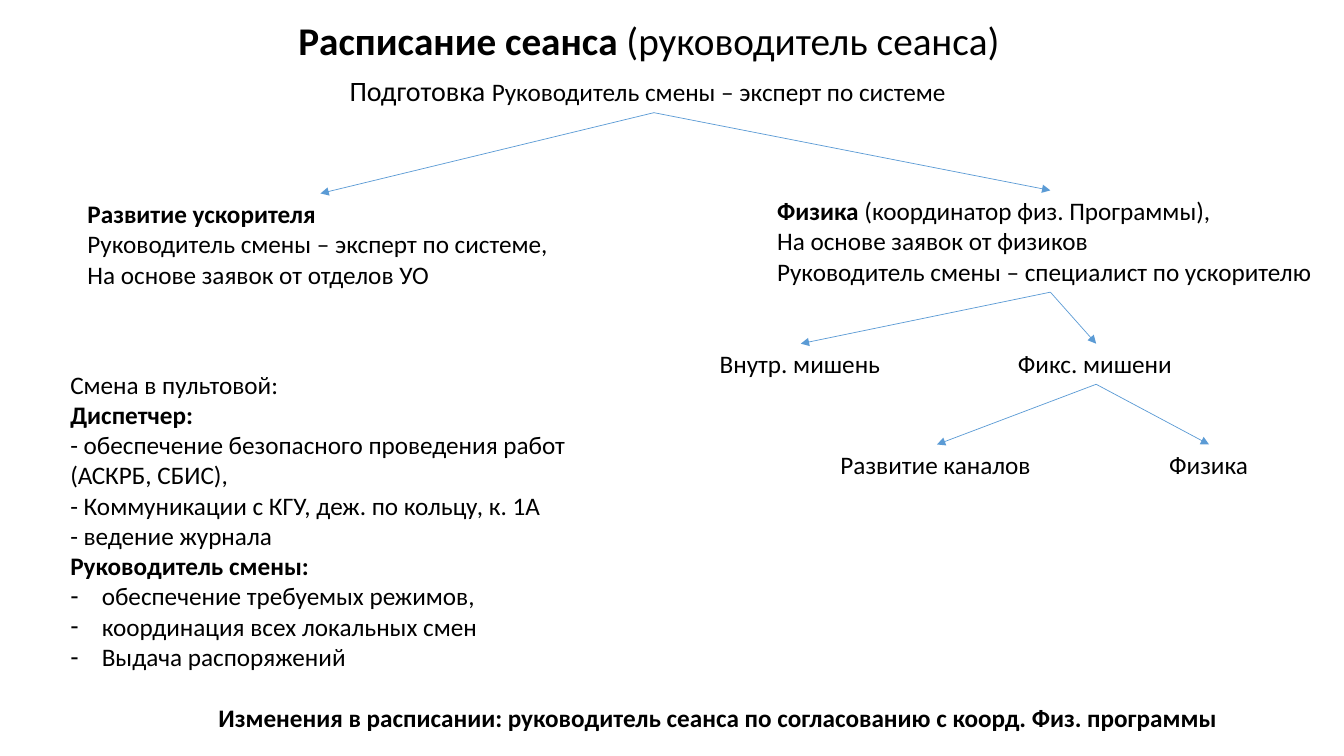
from lxml.etree import SubElement
from pptx import Presentation
from pptx.dml.color import RGBColor
from pptx.enum.shapes import MSO_CONNECTOR
from pptx.enum.text import MSO_ANCHOR, MSO_AUTO_SIZE, PP_ALIGN
from pptx.oxml.ns import qn
from pptx.util import Pt

BLACK = RGBColor(0x00, 0x00, 0x00)
BLUE = RGBColor(0x5B, 0x9B, 0xD5)
FONT = "Calibri"
TOP, BOTTOM = 0, 2  # connection sites of a box

# Each line is a list of runs: (text, bold)
SHIFT = [
    [("Смена в пультовой:", False)],
    [("Диспетчер:", True)],
    [("- обеспечение безопасного проведения работ", False)],
    [("(АСКРБ, СБИС),", False)],
    [("- Коммуникации с КГУ, деж. по кольцу, к. 1А", False)],
    [("- ведение журнала", False)],
    [("Руководитель смены:", True)],
]
DUTIES = [
    [("обеспечение требуемых режимов,", False)],
    [("координация всех локальных смен", False)],
    [("Выдача распоряжений", False)],
]


def place(shape, left, top, width, height):
    shape.left, shape.top = Pt(left), Pt(top)
    shape.width, shape.height = Pt(width), Pt(height)


def fill(shape, lines, size=18):
    frame = shape.text_frame
    frame.word_wrap = False
    frame.auto_size = MSO_AUTO_SIZE.SHAPE_TO_FIT_TEXT
    frame.vertical_anchor = MSO_ANCHOR.TOP
    frame.text = "\n".join("" for _ in lines)
    for para, runs in zip(frame.paragraphs, lines):
        para.alignment = PP_ALIGN.LEFT
        para.space_before = Pt(0)
        for text, bold in runs:
            run = para.add_run()
            run.text = text
            font = run.font
            font.name, font.size, font.bold = FONT, Pt(size), bold
            font.color.rgb = BLACK


def add_box(slide, area, lines):
    box = slide.shapes.add_textbox(*map(Pt, area))
    fill(box, lines)
    return box


def set_dash(para, dash):
    props = para._p.get_or_add_pPr()
    indent = Pt(22.5) if dash else 0
    props.set("marL", str(indent))
    props.set("indent", str(-indent))
    if dash:
        SubElement(props, qn("a:buChar"), char="-")
    else:
        SubElement(props, qn("a:buNone"))


def add_arrow(slide, start, end):
    arrow = slide.shapes.add_connector(MSO_CONNECTOR.STRAIGHT, 0, 0, 0, 0)
    arrow.begin_connect(start, BOTTOM)
    arrow.end_connect(end, TOP)
    arrow.line.color.rgb = BLUE
    arrow.line.width = Pt(0.5)
    props = arrow._element.spPr
    SubElement(props.find(qn("a:ln")), qn("a:tailEnd"), type="triangle")
    SubElement(props, qn("a:effectLst"))


def main():
    deck = Presentation()
    deck.slide_width, deck.slide_height = Pt(960), Pt(540)
    slide = deck.slides.add_slide(deck.slide_layouts[1])

    # Title and shift duties
    title, body = slide.placeholders
    place(title, 206, 8, 521, 41)
    fill(title, [[("Расписание сеанса ", True),
                  ("(руководитель сеанса)", False)]], 28)
    place(body, 43, 260, 373, 225.4)
    fill(body, SHIFT + DUTIES)
    for row, para in enumerate(body.text_frame.paragraphs):
        set_dash(para, row >= len(SHIFT))

    # Preparation and its two branches
    prep = add_box(slide, (242.6, 49, 449, 31.5), [
        [("Подготовка ", False),
         ("Руководитель смены – эксперт по системе", False)]])
    prep.text_frame.paragraphs[0].runs[0].font.size = Pt(20)
    growth = add_box(slide, (55.4, 138.2, 347, 72.7), [
        [("Развитие ускорителя", True)],
        [("Руководитель смены – эксперт по системе,", False)],
        [("На основе заявок от отделов УО", False)]])
    physics = add_box(slide, (548, 136, 404.6, 72.7), [
        [("Физика ", True), ("(координатор физ. Программы),", False)],
        [("На основе заявок от физиков", False)],
        [("Руководитель смены – специалист по ускорителю", False)]])

    # Targets and their uses
    inner, fixed, beams, study = [
        add_box(slide, (left, top, width, 29), [[(text, False)]])
        for left, top, width, text in (
            (507, 245.5, 130, "Внутр. мишень"),
            (720, 245.5, 126, "Фикс. мишени"),
            (593.3, 317.5, 152, "Развитие каналов"),
            (828, 317.5, 71.3, "Физика"))]

    # Tree arrows
    for start, ends in ((prep, (growth, physics)),
                        (physics, (inner, fixed)),
                        (fixed, (beams, study))):
        for end in ends:
            add_arrow(slide, start, end)

    # Closing note
    add_box(slide, (149, 498.2, 734.4, 29), [
        [("Изменения в расписании: руководитель сеанса "
          "по согласованию с коорд. Физ. программы", True)]])

    deck.save("out.pptx")


if __name__ == "__main__":
    main()
